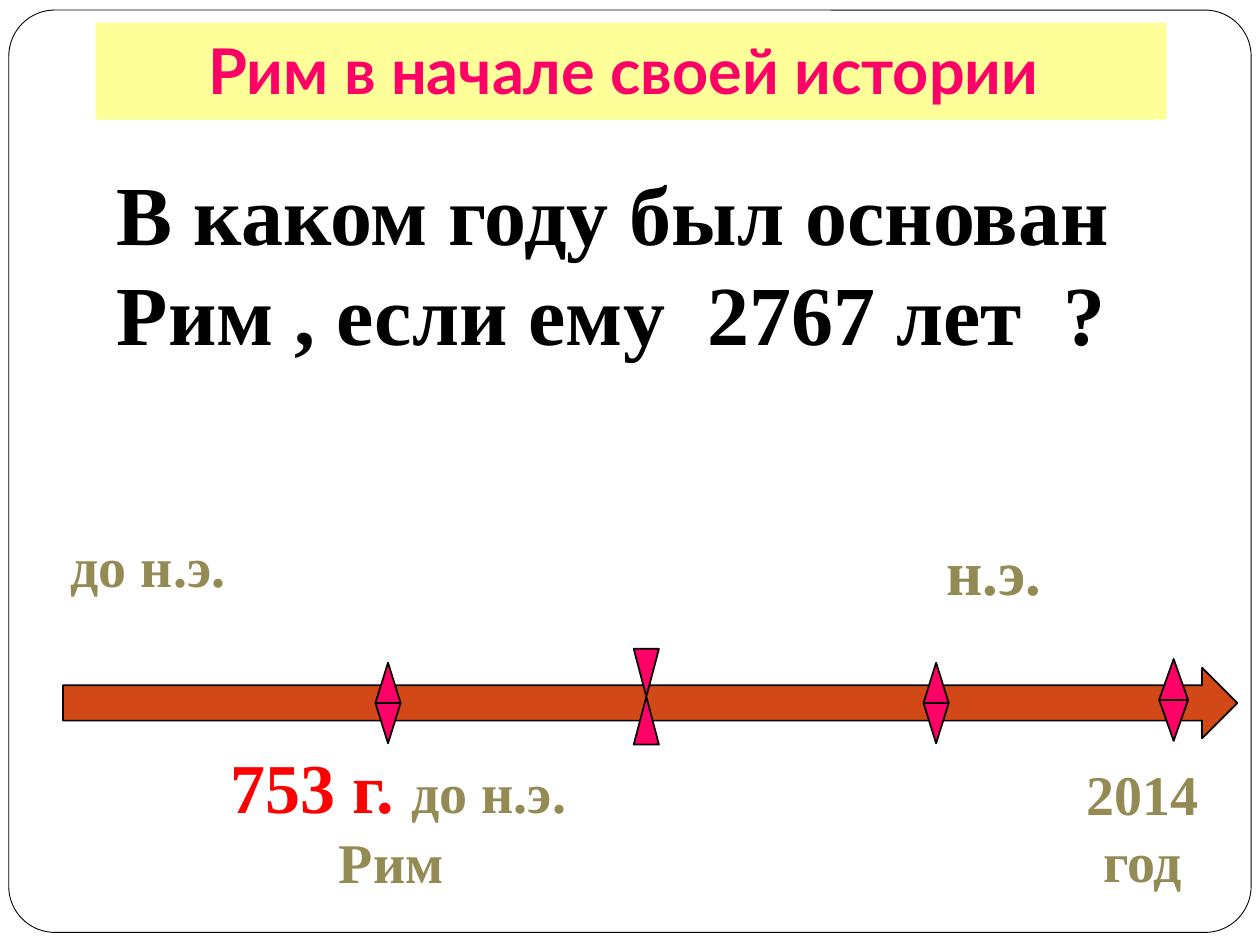
from pptx import Presentation
from pptx.dml.color import RGBColor
from pptx.enum.shapes import MSO_SHAPE
from pptx.enum.text import MSO_ANCHOR, MSO_AUTO_SIZE, PP_ALIGN
from pptx.util import Inches, Pt

COLORS = {"paper": "FFFFFF", "ink": "000000", "banner": "FFFF99", "pink": "FF0066",
          "axis": "D34817", "olive": "948A54", "red": "FF0000"}
SERIF = "Times New Roman"


def color(name):
    return RGBColor.from_string(COLORS[name])


class TimelineSlide:
    """Hold the slide and its style, and add each kind of element."""

    def __init__(self, deck):
        self.slide = deck.slides.add_slide(deck.slide_layouts[5])

    def style(self, run, size, ink, font=SERIF, bold=True):
        run.font.name = font
        run.font.size = Pt(size)
        run.font.bold = bold
        run.font.color.rgb = color(ink)

    def shape(self, kind, box, fill, width=1):
        figure = self.slide.shapes.add_shape(kind, *map(Inches, box))
        figure.shadow.inherit = False
        figure.fill.solid()
        figure.fill.fore_color.rgb = color(fill)
        figure.line.color.rgb = color("ink")
        figure.line.width = Pt(width)
        return figure

    def frame(self, box):
        border = self.shape(MSO_SHAPE.ROUNDED_RECTANGLE, box, "paper", 0.5)
        border.adjustments[0] = 0.05
        border._element.addnext(self.slide.shapes.title._element)

    def title(self, text, box):
        heading = self.slide.shapes.title
        heading.left, heading.top, heading.width, heading.height = map(Inches, box)
        heading.fill.solid()
        heading.fill.fore_color.rgb = color("banner")
        body = heading.text_frame
        body.text = text
        body.auto_size = MSO_AUTO_SIZE.NONE
        body.vertical_anchor = MSO_ANCHOR.BOTTOM
        body.margin_bottom = Inches(0.1)
        body.paragraphs[0].alignment = PP_ALIGN.CENTER
        self.style(body.paragraphs[0].runs[0], 36, "pink", "Lato")

    def text(self, lines, box, wrap=False, align=PP_ALIGN.CENTER):
        body = self.slide.shapes.add_textbox(*map(Inches, box)).text_frame
        body.word_wrap = wrap
        body.auto_size = MSO_AUTO_SIZE.SHAPE_TO_FIT_TEXT
        for index, line in enumerate(lines):
            paragraph = body.add_paragraph() if index else body.paragraphs[0]
            paragraph.alignment = align
            for words, *look in line:
                run = paragraph.add_run()
                run.text = words
                self.style(run, *look)


def main():
    deck = Presentation()
    deck.slide_width, deck.slide_height = Inches(10), Inches(7.5)
    page = TimelineSlide(deck)

    page.frame((0.07, 0.08, 9.86, 7.32))
    page.title("Рим в начале своей истории ", (0.76, 0.18, 8.5, 0.77))

    axis = page.shape(MSO_SHAPE.RIGHT_ARROW, (0.5, 5.3, 9.32, 0.56), "axis")
    axis.adjustments[0], axis.adjustments[1] = 0.5, 0.5
    page.shape(MSO_SHAPE.FLOWCHART_COLLATE, (5.03, 5.15, 0.2, 0.76), "pink")
    for event in ((2.98, 5.26, 0.2, 0.64), (7.33, 5.26, 0.2, 0.64), (9.2, 5.23, 0.23, 0.65)):
        page.shape(MSO_SHAPE.FLOWCHART_SORT, event, "pink")

    page.text([[("до н.э.", 32, "olive")]], (0.35, 4.17, 1.65, 0.64))
    page.text([[("н.э.", 36, "olive"), (" ", 24, "ink", SERIF, False)]],
              (7.35, 4.18, 1.16, 0.71))
    page.text([[(" ", 32, "olive"), ("753 г. ", 40, "red"), ("до н.э.", 32, "olive")],
               [("Рим", 32, "olive")]], (1.6, 5.85, 3.01, 1.31))
    page.text([[("2014", 32, "olive")], [("год", 32, "olive")]], (8.52, 5.98, 1.1, 1.18))
    page.text([[("В каком году был основан Рим , если ему  2767 лет  ?", 48, "ink")]],
              (0.83, 1.23, 8.99, 1.72), wrap=True, align=PP_ALIGN.LEFT)

    deck.save("out.pptx")


if __name__ == "__main__":
    main()
